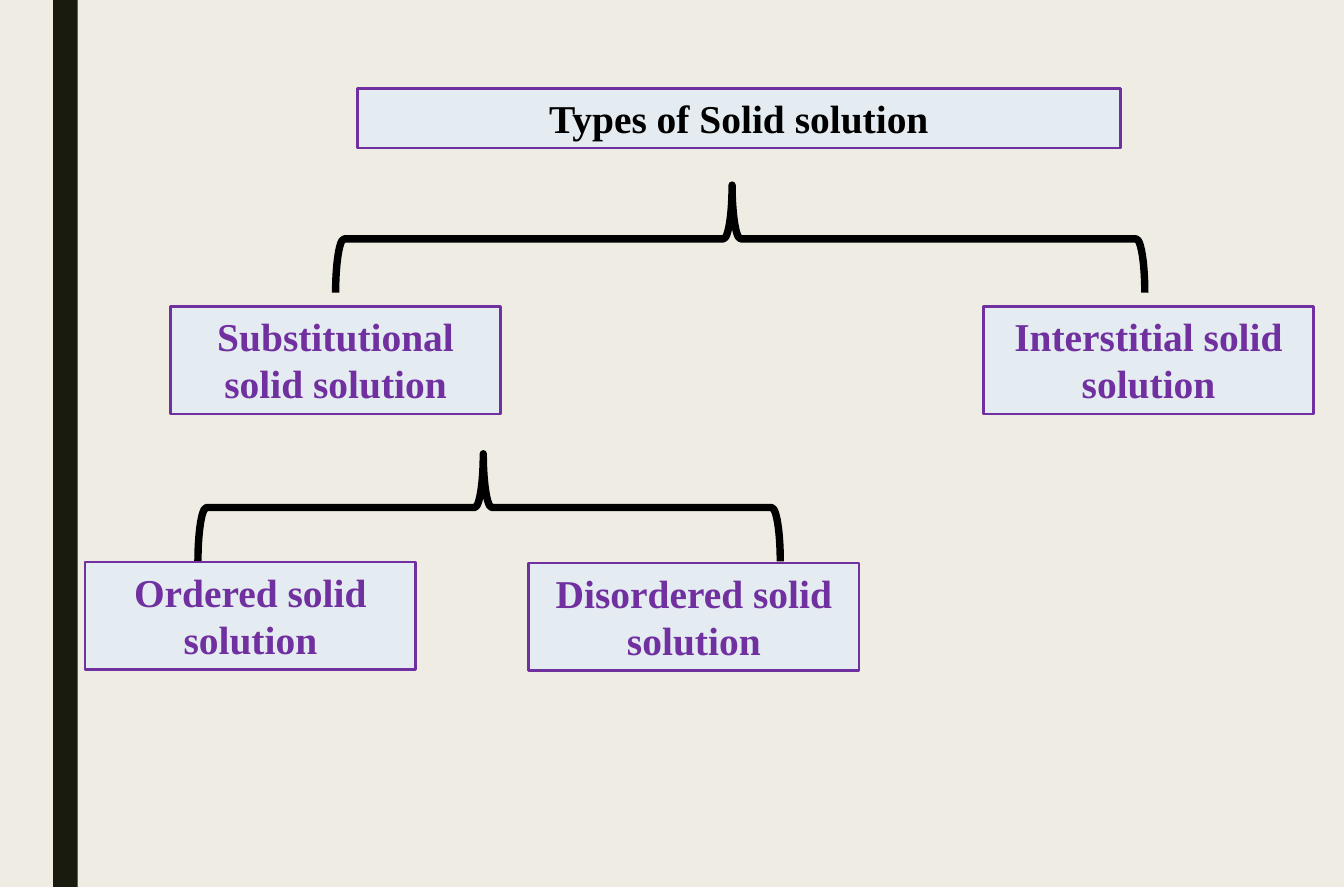
"""Builds a slide with a tree of the types of solid solution."""
import pptx
import pptx.util
import pptx.dml.color
import pptx.enum.shapes
import pptx.enum.text

Cm = pptx.util.Cm
Pt = pptx.util.Pt
RGBColor = pptx.dml.color.RGBColor
SHAPE = pptx.enum.shapes.MSO_SHAPE

CREAM = RGBColor(0xEF, 0xED, 0xE3)
DARK = RGBColor(0x19, 0x1B, 0x0E)
PALE_BLUE = RGBColor(0xE4, 0xEC, 0xF1)
PURPLE = RGBColor(0x70, 0x30, 0xA0)
BLACK = RGBColor(0, 0, 0)

BOX_WIDTH = 7.09
BOX_HEIGHT = 2.31
BRACE_DEPTH = 2.31

deck = pptx.Presentation()
deck.slide_width = Cm(28.85)
deck.slide_height = Cm(19.05)
page = deck.slides.add_slide(deck.slide_layouts[6])
page.background.fill.solid()
page.background.fill.fore_color.rgb = CREAM


def add_box(text, left, top, width=BOX_WIDTH, height=BOX_HEIGHT, color=PURPLE):
    box = page.shapes.add_shape(SHAPE.RECTANGLE, Cm(left), Cm(top), Cm(width), Cm(height))
    box.shadow.inherit = False
    box.fill.solid()
    box.fill.fore_color.rgb = PALE_BLUE
    box.line.color.rgb = PURPLE
    box.line.width = Pt(1.5)
    box.text_frame.word_wrap = True
    box.text_frame.vertical_anchor = pptx.enum.text.MSO_ANCHOR.TOP
    para = box.text_frame.paragraphs[0]
    para.alignment = pptx.enum.text.PP_ALIGN.CENTER
    span = para.add_run()
    span.text = text
    span.font.name = "Times New Roman"
    span.font.size = Pt(24)
    span.font.bold = True
    span.font.color.rgb = color


side_bar = page.shapes.add_shape(SHAPE.RECTANGLE, Cm(1.14), Cm(0), Cm(0.53), deck.slide_height)
side_bar.shadow.inherit = False
side_bar.fill.solid()
side_bar.fill.fore_color.rgb = DARK
side_bar.line.fill.background()

for center_x, center_y, span_width in [(15.89, 5.13, 17.37), (10.5, 10.9, 12.5)]:
    brace = page.shapes.add_shape(
        SHAPE.RIGHT_BRACE,
        Cm(center_x - BRACE_DEPTH / 2), Cm(center_y - span_width / 2),
        Cm(BRACE_DEPTH), Cm(span_width),
    )
    brace.rotation = 270
    brace.adjustments[0] = 0.08
    brace.adjustments[1] = 0.49
    brace.shadow.inherit = False
    brace.fill.background()
    brace.line.color.rgb = BLACK
    brace.line.width = Pt(4.5)

add_box("Types of Solid solution", 7.67, 1.9, width=16.38, height=1.28, color=BLACK)
for text, left, top in [
    ("Substitutional solid solution", 3.66, 6.58),
    ("Interstitial solid solution", 21.11, 6.58),
    ("Ordered solid solution", 1.83, 12.07),
    ("Disordered solid solution", 11.35, 12.09),
]:
    add_box(text, left, top)

deck.save("out.pptx")
